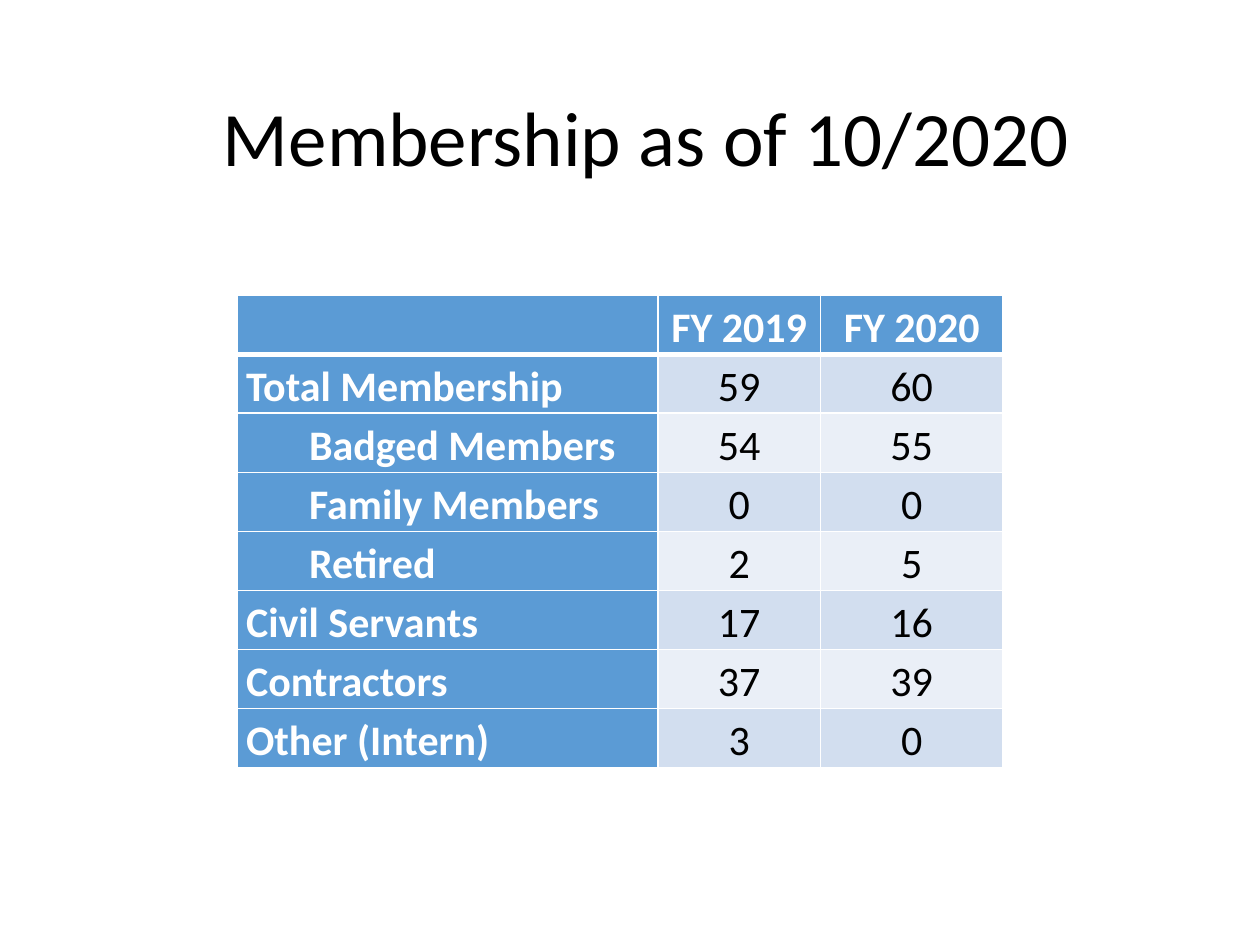
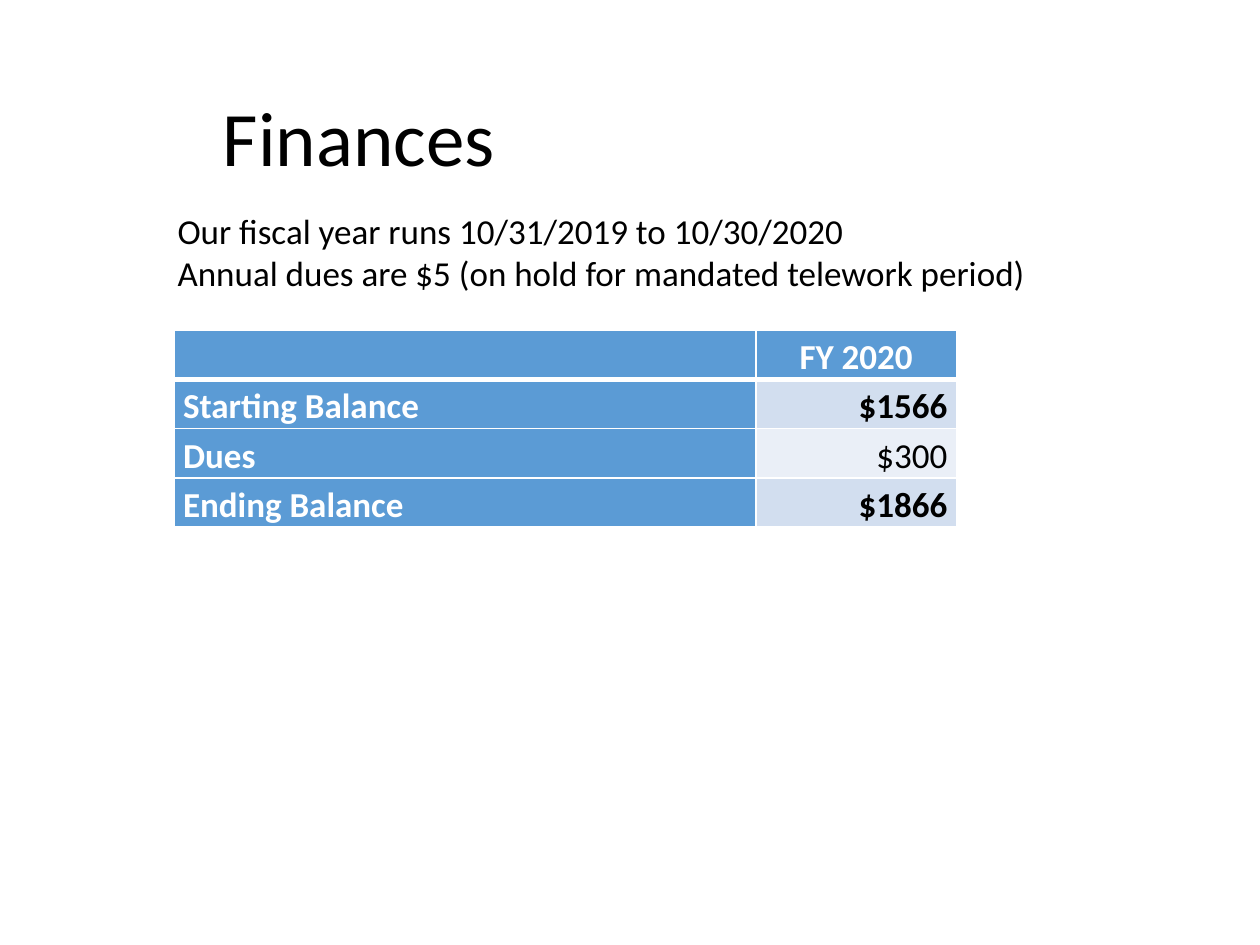
from lxml import etree
from pptx import Presentation
from pptx.dml.color import RGBColor
from pptx.enum.text import MSO_ANCHOR as Anchor, MSO_AUTO_SIZE as AutoSize, PP_ALIGN as Align
from pptx.oxml.ns import qn
from pptx.util import Cm, Pt

FONT = "Calibri"
BLACK, WHITE, BLUE = "000000", "FFFFFF", "5B9BD5"
BANDS = ["D2DEEF", "EAEFF7"]
BORDER, HEADER_BORDER = Pt(1), Pt(3)


def color(hex_code):
    return RGBColor.from_string(hex_code)


def add_span(para, text, size, hex_code=BLACK, bold=False):
    span = para.add_run()
    span.text = text
    span.font.name = FONT
    span.font.size = Pt(size)
    span.font.bold = bold
    span.font.color.rgb = color(hex_code)


# Each row: label, indent level, values, whether the values are bold
membership_rows = [
    ("", 0, ["FY 2019", "FY 2020"], True),
    ("Total Membership", 0, ["59", "60"], False),
    ("Badged Members", 1, ["54", "55"], False),
    ("Family Members", 1, ["0", "0"], False),
    ("Retired", 1, ["2", "5"], False),
    ("Civil Servants", 0, ["17", "16"], False),
    ("Contractors", 0, ["37", "39"], False),
    ("Other (Intern)", 0, ["3", "0"], False),
]
finance_rows = [
    ("", 0, ["FY 2020"], True),
    ("Starting Balance", 0, ["$1566"], True),
    ("Dues", 0, ["$300"], False),
    ("Ending Balance", 0, ["$1866"], True),
]

# Title, table rows, left, top, column widths, row height, text size, value alignment
pages = [
    ("Membership as of 10/2020", membership_rows, 4.78, 5.95, [8.48, 3.28, 3.68], 1.19, 24, Align.CENTER),
    ("Finances", finance_rows, 3.51, 6.65, [11.73, 4.04], 0.99, 20, Align.RIGHT),
]

deck = Presentation()
deck.slide_width, deck.slide_height = Cm(25.4), Cm(19.05)
title_only = deck.slide_layouts[5]

for heading, rows, left, top, widths, row_height, size, value_align in pages:
    page = deck.slides.add_slide(title_only)

    title = page.shapes.title
    title.left, title.top, title.width, title.height = Cm(4.24), Cm(1.02), Cm(19.41), Cm(3.68)
    title.text_frame.vertical_anchor = Anchor.MIDDLE
    title.text_frame.auto_size = AutoSize.NONE
    para = title.text_frame.paragraphs[0]
    para.alignment = Align.LEFT
    para.line_spacing = 0.9
    add_span(para, heading, 44)

    table = page.shapes.add_table(
        len(rows), len(widths), Cm(left), Cm(top), Cm(sum(widths)), Cm(row_height * len(rows))
    ).table
    table.first_col = True
    for column, width in zip(table.columns, widths):
        column.width = Cm(width)

    for row_index, (label, level, values, bold_values) in enumerate(rows):
        table.rows[row_index].height = Cm(row_height)
        is_header = row_index == 0
        for column_index, text in enumerate([label] + values):
            is_label = column_index == 0
            cell = table.cell(row_index, column_index)
            cell.margin_left = cell.margin_right = Cm(0.18)
            cell.margin_top = cell.margin_bottom = 0

            properties = cell._tc.get_or_add_tcPr()
            for side in ["lnL", "lnR", "lnT", "lnB"]:
                touches_header = (is_header and side == "lnB") or (row_index == 1 and side == "lnT")
                line_width = HEADER_BORDER if touches_header else BORDER
                line = etree.SubElement(properties, qn("a:" + side), w=str(line_width))
                line_fill = etree.SubElement(line, qn("a:solidFill"))
                etree.SubElement(line_fill, qn("a:srgbClr"), val=WHITE)
            on_blue = is_header or is_label
            cell.fill.solid()
            cell.fill.fore_color.rgb = color(BLUE if on_blue else BANDS[(row_index - 1) % 2])

            if not text:
                continue
            para = cell.text_frame.paragraphs[0]
            para.line_spacing = 1.15
            if is_label:
                para.alignment = Align.LEFT
                para.level = level
                para._p.get_or_add_pPr().set("marL", str(Cm(1.27 * level)))
            else:
                para.alignment = Align.CENTER if is_header else value_align
            add_span(para, text, size, WHITE if on_blue else BLACK, is_label or bold_values)

# Fiscal year note on the finances page
note = page.shapes.add_textbox(Cm(3.33), Cm(4.09), Cm(17.75), Cm(1.96)).text_frame
note.word_wrap = False
note.auto_size = AutoSize.SHAPE_TO_FIT_TEXT
note.vertical_anchor = Anchor.MIDDLE
para = note.paragraphs[0]
add_span(para, "Our fiscal year runs 10/31/2019 to 10/30/2020", 20)
para.add_line_break()
add_span(para, "Annual dues are $5 (on hold for mandated telework period)", 20)

deck.save("out.pptx")
